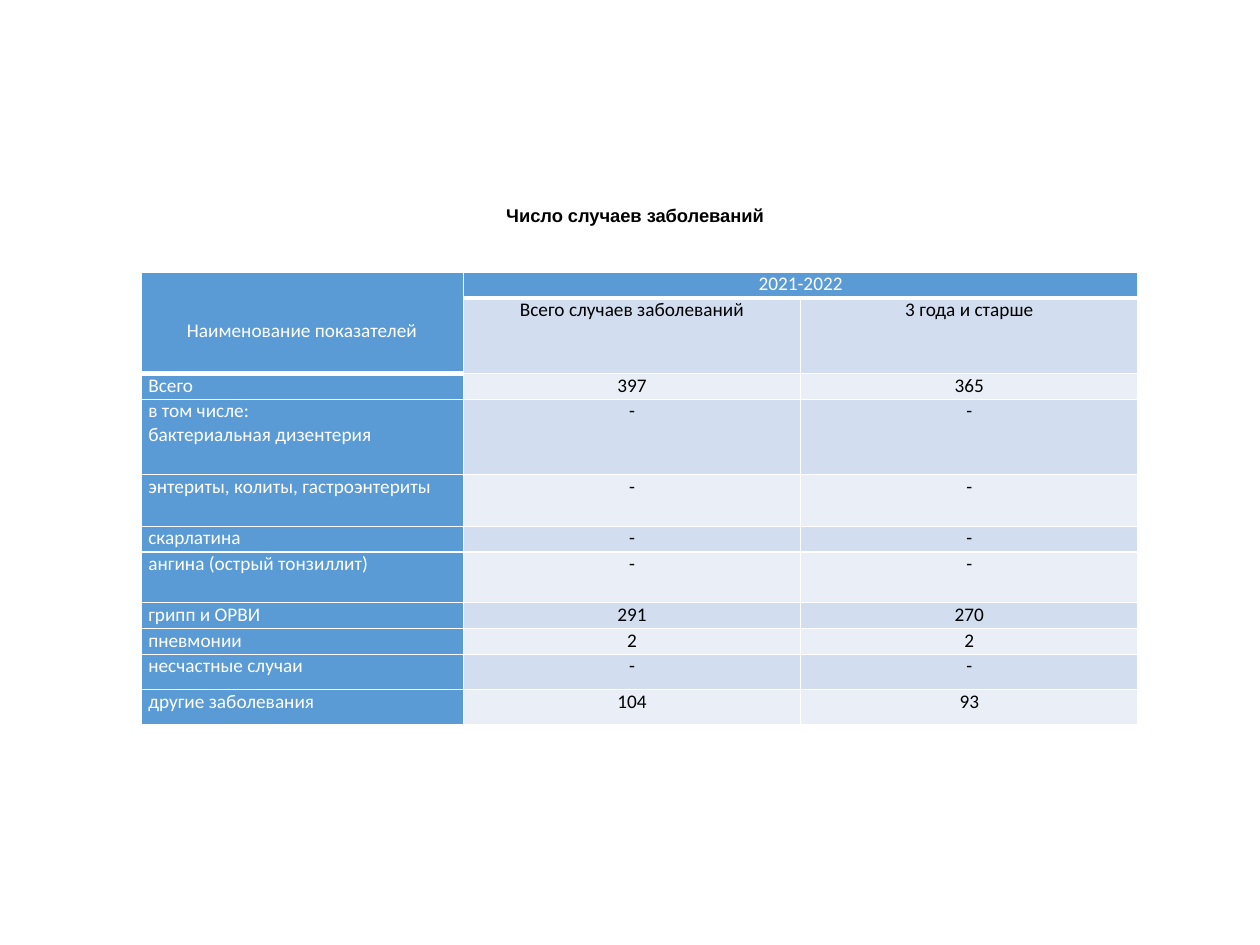
from lxml.etree import SubElement
from pptx import Presentation
from pptx.dml.color import RGBColor
from pptx.enum.text import MSO_ANCHOR, MSO_AUTO_SIZE, PP_ALIGN
from pptx.oxml.ns import qn
from pptx.util import Cm, Pt

TITLE = "Число случаев заболеваний"
ROWS = [
    (0.52, ["Наименование показателей"], "2021-2022", ""),
    (1.52, [], "Всего случаев заболеваний", "3 года и старше"),
    (0.52, ["Всего"], "397", "365"),
    (1.52, ["в том числе:", "бактериальная дизентерия"], "-", "-"),
    (1.04, ["энтериты, колиты, гастроэнтериты"], "-", "-"),
    (0.52, ["скарлатина"], "-", "-"),
    (1.02, ["ангина (острый тонзиллит)"], "-", "-"),
    (0.52, ["грипп и ОРВИ"], "291", "270"),
    (0.52, ["пневмонии"], "2", "2"),
    (0.71, ["несчастные случаи"], "-", "-"),
    (0.71, ["другие заболевания"], "104", "93"),
]
COLUMN_WIDTHS = [6.5, 6.8, 6.8]
WHITE, BLACK, BLUE = "FFFFFF", "000000", "5B9BD5"
BANDS = ["EAEFF7", "D2DEEF"]


def color(value):
    return RGBColor.from_string(value)


def write(frame, lines, size=11, font="Calibri", ink=BLACK, bold=False, align=PP_ALIGN.CENTER):
    for index, line in enumerate(lines):
        para = frame.paragraphs[0] if index == 0 else frame.add_paragraph()
        para.alignment = align
        span = para.add_run()
        span.text = line
        span.font.size = Pt(size)
        span.font.name = font
        span.font.bold = bold
        span.font.color.rgb = color(ink)


def add_borders(cell, bottom):
    properties = cell._tc.get_or_add_tcPr()
    for side, width in (("L", 1), ("R", 1), ("T", 1), ("B", bottom)):
        line = SubElement(properties, qn(f"a:ln{side}"), w=str(Pt(width)))
        fill = SubElement(line, qn("a:solidFill"))
        SubElement(fill, qn("a:srgbClr"), val=WHITE)


def style_cell(cell, fill, bottom):
    cell.margin_left = cell.margin_right = Cm(0.15)
    cell.margin_top = cell.margin_bottom = Cm(0)
    add_borders(cell, bottom)
    cell.fill.solid()
    cell.fill.fore_color.rgb = color(fill)


def add_cases_table(page):
    heights = [row[0] for row in ROWS]
    table = page.shapes.add_table(
        len(ROWS), len(COLUMN_WIDTHS), Cm(2.84), Cm(5.49),
        Cm(sum(COLUMN_WIDTHS)), Cm(sum(heights)),
    ).table
    for column, width in zip(table.columns, COLUMN_WIDTHS):
        column.width = Cm(width)
    for row_index, (height, labels, total, older) in enumerate(ROWS):
        table.rows[row_index].height = Cm(height)
        for column_index, lines in enumerate((labels, [total], [older])):
            cell = table.cell(row_index, column_index)
            heading = row_index == 0 or column_index == 0
            style_cell(cell, BLUE if heading else BANDS[row_index % 2], 3 if row_index == 0 else 1)
            label = column_index == 0 and row_index > 0
            if any(lines):
                write(cell.text_frame, lines, ink=WHITE if heading else BLACK,
                      align=PP_ALIGN.JUSTIFY if label else PP_ALIGN.CENTER)
    table.cell(0, 0).margin_top = Cm(0.95)
    table.cell(0, 0).merge(table.cell(1, 0))
    table.cell(0, 1).merge(table.cell(0, 2))


def add_title(page):
    box = page.shapes.add_textbox(Cm(9.12), Cm(4.01), Cm(7.37), Cm(0.64))
    frame = box.text_frame
    frame.word_wrap = True
    frame.auto_size = MSO_AUTO_SIZE.SHAPE_TO_FIT_TEXT
    frame.vertical_anchor = MSO_ANCHOR.MIDDLE
    frame.margin_left = frame.margin_right = Cm(0.18)
    frame.margin_top = frame.margin_bottom = Cm(0.1)
    write(frame, [TITLE], size=10.5, font="Arial", bold=True)


def main():
    deck = Presentation()
    deck.slide_width, deck.slide_height = Cm(25.4), Cm(19.05)
    page = deck.slides.add_slide(deck.slide_layouts[6])
    add_cases_table(page)
    add_title(page)
    deck.save("out.pptx")


if __name__ == "__main__":
    main()
